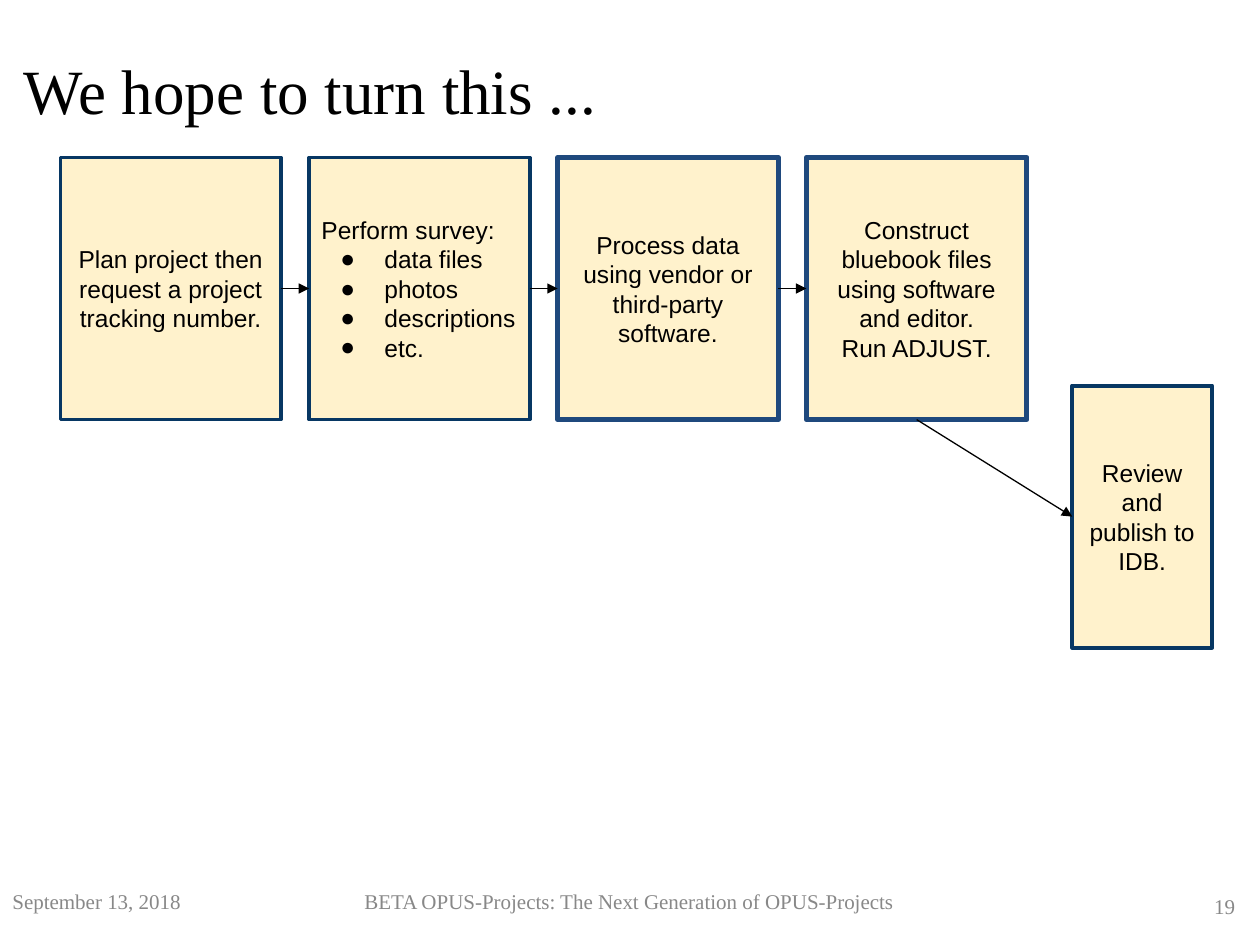
from dataclasses import dataclass
from typing import Any, Optional

from lxml.etree import SubElement
from pptx import Presentation
from pptx.dml.color import RGBColor
from pptx.enum.shapes import MSO_CONNECTOR, MSO_SHAPE
from pptx.enum.text import MSO_ANCHOR, PP_ALIGN
from pptx.oxml.ns import qn
from pptx.util import Inches, Pt

SLIDE_WIDTH, SLIDE_HEIGHT = 10, 7.5

# Flow grid: four equal columns spread between two edges
FLOW_LEFT, FLOW_RIGHT, FLOW_TOP = 0.48, 8.15, 1.25
STEP_WIDTH, STEP_HEIGHT, FLOW_COLUMNS = 1.75, 2.08, 4
PITCH = (FLOW_RIGHT - FLOW_LEFT - STEP_WIDTH) / (FLOW_COLUMNS - 1)

# Footer band
FOOTER_TOP, FOOTER_HEIGHT = 6.95, 0.48

CREAM, BLACK, GREY = "FFF2CC", "000000", "888888"
NAVY, BLUE = "073763", "1F497D"
TOP, LEFT, BOTTOM, RIGHT = range(4)


@dataclass(frozen=True)
class Area:
    left: float
    top: float
    width: float
    height: float

    def lengths(self) -> list[int]:
        return [Inches(side) for side in (self.left, self.top, self.width, self.height)]


@dataclass(frozen=True)
class Step:
    area: Area
    lines: list[str]
    border: str = NAVY
    border_width: float = 2.25
    bullets_from: Optional[int] = None


@dataclass(frozen=True)
class Footer:
    left: float
    right: float
    text: str
    align: PP_ALIGN
    anchor: MSO_ANCHOR = MSO_ANCHOR.TOP
    inset: float = 0.1


def color(value: str) -> RGBColor:
    return RGBColor.from_string(value)


def flow_area(column: int) -> Area:
    return Area(FLOW_LEFT + column * PITCH, FLOW_TOP, STEP_WIDTH, STEP_HEIGHT)


def add_bullet(para: Any) -> None:
    properties = para._p.get_or_add_pPr()
    properties.set("marL", str(Inches(0.5)))
    properties.set("indent", str(Inches(-0.35)))
    tint = SubElement(properties, qn("a:buClr"))
    SubElement(tint, qn("a:srgbClr"), val=BLACK)
    SubElement(properties, qn("a:buFont"), typeface="Arial")
    SubElement(properties, qn("a:buChar"), char="●")


def write(box: Any, lines: list[str], *, font: str = "Times New Roman",
          size: float = 12, tint: str = BLACK, align: PP_ALIGN = PP_ALIGN.LEFT,
          anchor: MSO_ANCHOR = MSO_ANCHOR.TOP, inset: float = 0.1,
          bullets_from: Optional[int] = None) -> None:
    frame = box.text_frame
    frame.word_wrap = True
    frame.vertical_anchor = anchor
    frame.margin_left = frame.margin_right = Inches(0.1)
    frame.margin_top = frame.margin_bottom = Inches(inset)
    for index, line in enumerate(lines):
        para = frame.paragraphs[0] if index == 0 else frame.add_paragraph()
        para.alignment = align
        para.space_before = Pt(0)
        if bullets_from is not None and index >= bullets_from:
            add_bullet(para)
        span = para.add_run()
        span.text = line
        span.font.name = font
        span.font.size = Pt(size)
        span.font.color.rgb = color(tint)


def draw_step(page: Any, step: Step) -> Any:
    box = page.shapes.add_shape(MSO_SHAPE.RECTANGLE, *step.area.lengths())
    box.shadow.inherit = False
    box.fill.solid()
    box.fill.fore_color.rgb = color(CREAM)
    box.line.color.rgb = color(step.border)
    box.line.width = Pt(step.border_width)
    align = PP_ALIGN.CENTER if step.bullets_from is None else PP_ALIGN.LEFT
    write(box, step.lines, font="Arial", size=14, align=align,
          anchor=MSO_ANCHOR.MIDDLE, bullets_from=step.bullets_from)
    return box


def draw_arrow(page: Any, start: Any, start_side: int, end: Any, end_side: int) -> None:
    arrow = page.shapes.add_connector(MSO_CONNECTOR.STRAIGHT, 0, 0, 0, 0)
    arrow.begin_connect(start, start_side)
    arrow.end_connect(end, end_side)
    arrow.line.color.rgb = color(BLACK)
    arrow.line.width = Pt(0.75)
    SubElement(arrow.line._get_or_add_ln(), qn("a:tailEnd"), type="triangle")
    SubElement(arrow._element.spPr, qn("a:effectLst"))


def draw_footer(page: Any, footer: Footer) -> None:
    area = Area(footer.left, FOOTER_TOP, footer.right - footer.left, FOOTER_HEIGHT)
    box = page.shapes.add_textbox(*area.lengths())
    write(box, [footer.text], tint=GREY, align=footer.align,
          anchor=footer.anchor, inset=footer.inset)


STEPS = [
    Step(flow_area(0), ["Plan project then request a project tracking number."]),
    Step(flow_area(1),
         ["Perform survey:", "data files", "photos", "descriptions", "etc."],
         bullets_from=1),
    Step(flow_area(2), ["Process data using vendor or third-party software."],
         BLUE, 3),
    Step(flow_area(3),
         ["Construct bluebook files using software and editor.", "Run ADJUST."],
         BLUE, 3),
    Step(Area(8.51, 3.06, 1.11, STEP_HEIGHT), ["Review and publish to IDB."]),
]

FOOTERS = [
    Footer(0, 1.58, "September 13, 2018", PP_ALIGN.LEFT),
    Footer(1.58, 8.41, "BETA OPUS-Projects: The Next Generation of OPUS-Projects",
           PP_ALIGN.CENTER),
    Footer(8.41, 9.9, "19", PP_ALIGN.RIGHT, MSO_ANCHOR.MIDDLE, 0.05),
]


def main() -> None:
    deck = Presentation()
    deck.slide_width, deck.slide_height = Inches(SLIDE_WIDTH), Inches(SLIDE_HEIGHT)
    page = deck.slides.add_slide(deck.slide_layouts[5])

    # Title
    title = page.shapes.title
    title.left, title.top, title.width, title.height = Area(0.09, 0.36, 9.82, 0.87).lengths()
    write(title, ["We hope to turn this ..."], size=36, inset=0.05)

    # Process steps, then the arrows between them
    boxes = [draw_step(page, step) for step in STEPS]
    *flow, review = boxes
    for start, end in zip(flow, flow[1:]):
        draw_arrow(page, start, RIGHT, end, LEFT)
    draw_arrow(page, flow[-1], BOTTOM, review, LEFT)

    # Footer
    for footer in FOOTERS:
        draw_footer(page, footer)

    deck.save("out.pptx")


if __name__ == "__main__":
    main()
